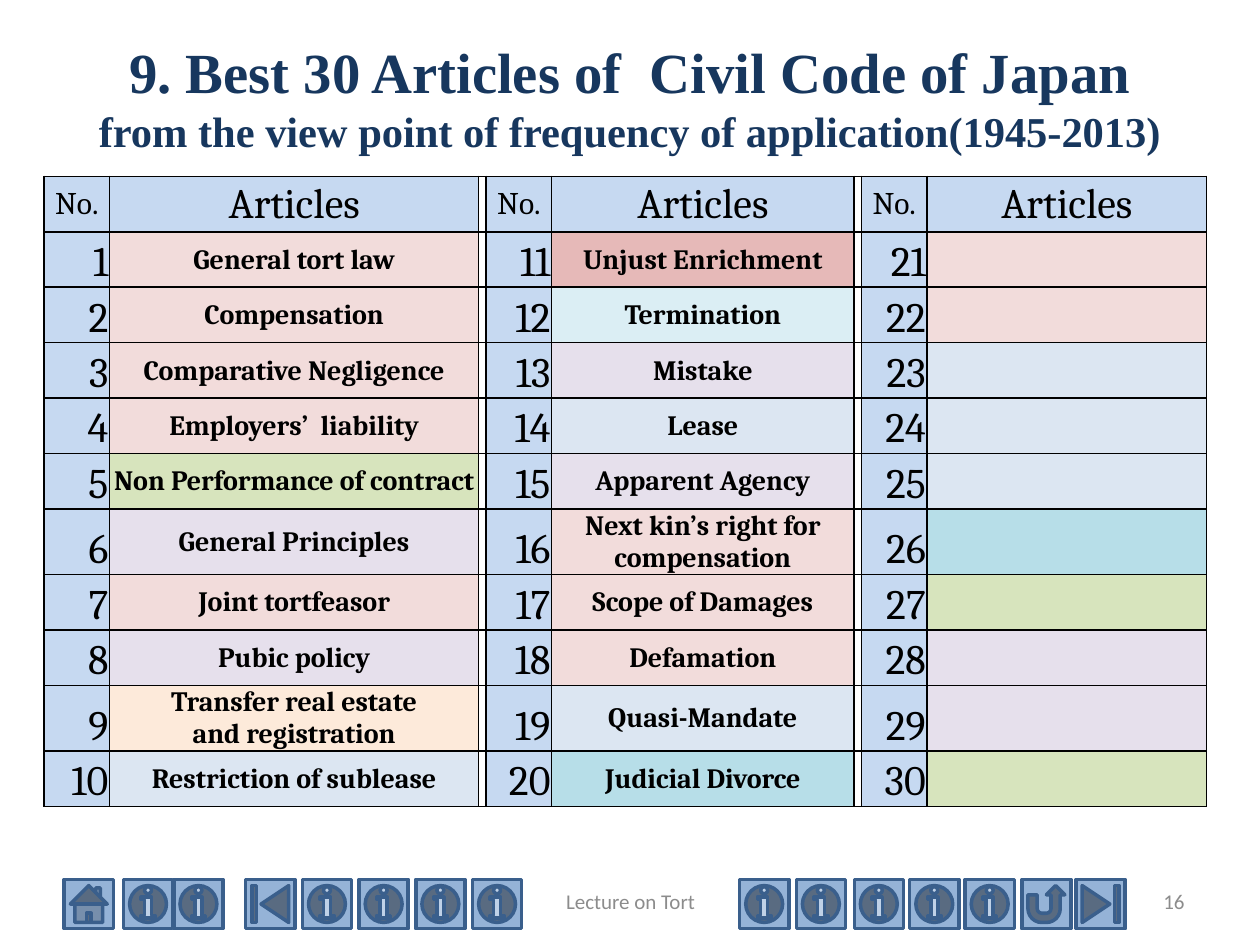
import pptx
import pptx.util
import pptx.dml.color
import pptx.enum.shapes
import pptx.enum.text
import pptx.oxml
import pptx.oxml.ns

Inches = pptx.util.Inches
Pt = pptx.util.Pt
Shape = pptx.enum.shapes.MSO_SHAPE
Align = pptx.enum.text.PP_ALIGN
Anchor = pptx.enum.text.MSO_ANCHOR

# Fills of the articles, grouped by field of law
TORT, ENRICHMENT, CONTRACT = "F2DCDB", "E6B9B8", "DCE6F2"
GENERAL, OBLIGATION, TERMINATION = "E6E0EC", "D7E4BD", "DBEEF4"
FAMILY, PROPERTY, HEADER = "B7DEE8", "FDEADA", "C6D9F1"

ARTICLES = [
    ("General tort law", TORT),
    ("Compensation", TORT),
    ("Comparative Negligence", TORT),
    ("Employers’  liability", TORT),
    ("Non Performance of contract", OBLIGATION),
    ("General Principles", GENERAL),
    ("Joint tortfeasor", TORT),
    ("Pubic policy", GENERAL),
    ("Transfer real estate\vand registration", PROPERTY),
    ("Restriction of sublease", CONTRACT),
    ("Unjust Enrichment", ENRICHMENT),
    ("Termination", TERMINATION),
    ("Mistake", GENERAL),
    ("Lease", CONTRACT),
    ("Apparent Agency", GENERAL),
    ("Next kin’s right for compensation", TORT),
    ("Scope of Damages", TORT),
    ("Defamation", TORT),
    ("Quasi-Mandate", CONTRACT),
    ("Judicial Divorce", FAMILY),
] + [("", fill) for fill in (TORT, TORT, CONTRACT, CONTRACT, CONTRACT,
                             FAMILY, OBLIGATION, GENERAL, GENERAL, OBLIGATION)]
ROWS_PER_BLOCK = 10
COLUMN_WIDTHS = [0.52, 2.93, 0.05, 0.52, 2.4, 0.05, 0.52, 2.22]
ROW_HEIGHT = 0.44

INFORMATION = Shape.ACTION_BUTTON_INFORMATION
BUTTONS = {
    0.51: Shape.ACTION_BUTTON_HOME,
    1.95: Shape.ACTION_BUTTON_BEGINNING,
    8.11: Shape.ACTION_BUTTON_RETURN,
    8.54: Shape.ACTION_BUTTON_END,
} | dict.fromkeys((0.98, 1.38, 2.4, 2.85, 3.3, 3.75,
                   5.87, 6.32, 6.78, 7.22, 7.66), INFORMATION)


def color(value):
    return pptx.dml.color.RGBColor.from_string(value)


class SlideBuilder:
    ink = "000000"
    navy = "17375E"
    muted = "8C8C8C"
    button_fill, button_line = "95B3D7", "3A5F8C"

    def __init__(self, page):
        self.page = page

    def style(self, para, name, size, tint, align, bold=False):
        para.alignment = align
        para.font.name = name
        para.font.size = Pt(size)
        para.font.bold = bold
        para.font.color.rgb = color(tint)

    def title(self, main, subtitle):
        box = self.page.shapes.title
        box.left, box.top = Inches(0.5), Inches(0.3)
        box.width, box.height = Inches(9), Inches(0.93)
        frame = box.text_frame
        frame.vertical_anchor = Anchor.MIDDLE
        frame.auto_size = pptx.enum.text.MSO_AUTO_SIZE.NONE
        para = frame.paragraphs[0]
        self.style(para, "Times New Roman", 32.4, self.navy, Align.CENTER, True)
        para.add_run().text = main
        para.add_line_break()
        span = para.add_run()
        span.text = subtitle
        span.font.size = Pt(24.3)

    def footer(self, text, left, width, align):
        box = self.page.shapes.add_textbox(
            Inches(left), Inches(6.95), Inches(width), Inches(0.4))
        frame = box.text_frame
        frame.word_wrap = True
        frame.vertical_anchor = Anchor.MIDDLE
        frame.text = text
        self.style(frame.paragraphs[0], "Calibri", 12, self.muted, align)

    def button(self, kind, left):
        shape = self.page.shapes.add_shape(
            kind, Inches(left), Inches(6.98), Inches(0.39), Inches(0.39))
        shape.shadow.inherit = False
        shape.fill.solid()
        shape.fill.fore_color.rgb = color(self.button_fill)
        shape.line.color.rgb = color(self.button_line)
        shape.line.width = Pt(2)

    def table(self, left, top, rows, widths, row_height):
        table = self.page.shapes.add_table(
            rows, len(widths), Inches(left), Inches(top),
            Inches(sum(widths)), Inches(rows * row_height)).table
        table.first_row = table.horz_banding = False
        for column, width in zip(table.columns, widths):
            column.width = Inches(width)
        for row in table.rows:
            row.height = Inches(row_height)
        for cell in table.iter_cells():
            cell.margin_left = cell.margin_top = cell.margin_right = Inches(0.01)
            cell.margin_bottom = 0
            cell.fill.background()
            self.border(cell)
        return table

    def border(self, cell):
        properties = cell._tc.get_or_add_tcPr()
        for index, side in enumerate(("lnL", "lnR", "lnT", "lnB")):
            properties.insert(index, pptx.oxml.parse_xml(
                f'<a:{side} {pptx.oxml.ns.nsdecls("a")} w="12700"><a:solidFill>'
                f'<a:srgbClr val="{self.ink}"/></a:solidFill></a:{side}>'))

    def cell(self, cell, text, fill, size, align=Align.CENTER,
             anchor=Anchor.MIDDLE, bold=False):
        cell.fill.solid()
        cell.fill.fore_color.rgb = color(fill)
        cell.vertical_anchor = anchor
        para = cell.text_frame.paragraphs[0]
        para.text = text
        self.style(para, "Cambria", size, self.ink, align, bold)


def main():
    deck = pptx.Presentation()
    deck.slide_width, deck.slide_height = Inches(10), Inches(7.5)
    builder = SlideBuilder(deck.slides.add_slide(deck.slide_layouts[5]))

    # Navigation buttons
    for left, kind in sorted(BUTTONS.items()):
        builder.button(kind, left)

    # Title
    builder.title("9. Best 30 Articles of  Civil Code of Japan",
                  "from the view point of frequency of application(1945-2013)")

    # Ranking table: three blocks of number and article, with narrow gaps
    table = builder.table(0.35, 1.4, ROWS_PER_BLOCK + 1, COLUMN_WIDTHS, ROW_HEIGHT)
    for column in range(0, len(COLUMN_WIDTHS), 3):
        builder.cell(table.cell(0, column), "No.", HEADER, 18)
        builder.cell(table.cell(0, column + 1), "Articles", HEADER, 24)
    for index, (article, fill) in enumerate(ARTICLES):
        block, row = divmod(index, ROWS_PER_BLOCK)
        builder.cell(table.cell(row + 1, 3 * block), str(index + 1), HEADER, 24,
                     Align.RIGHT, Anchor.BOTTOM)
        builder.cell(table.cell(row + 1, 3 * block + 1), article, fill, 16, bold=True)

    # Footer
    builder.footer("Lecture on Tort", 3.42, 3.17, Align.CENTER)
    builder.footer("16", 7.17, 2.33, Align.RIGHT)

    deck.save("out.pptx")


if __name__ == "__main__":
    main()
